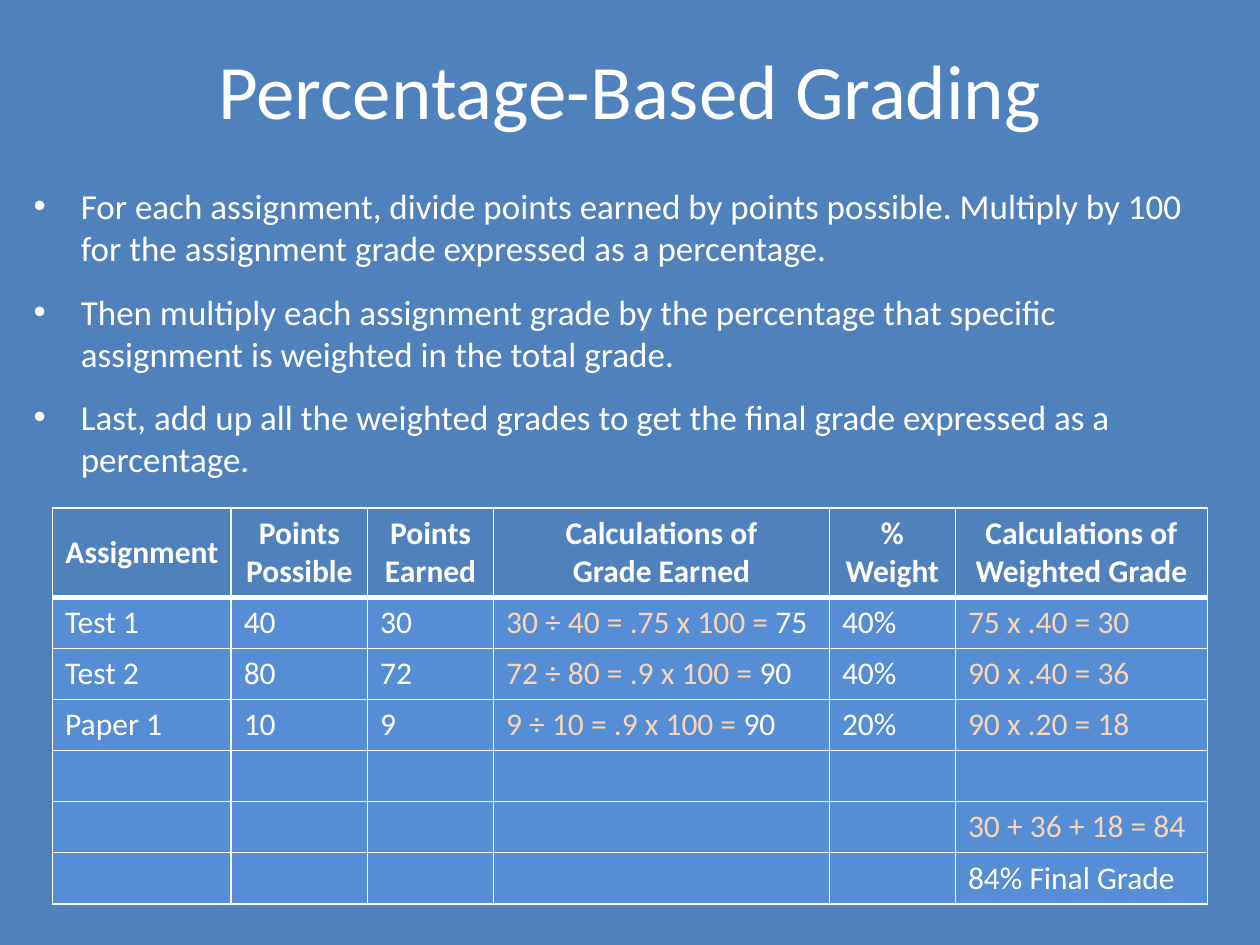
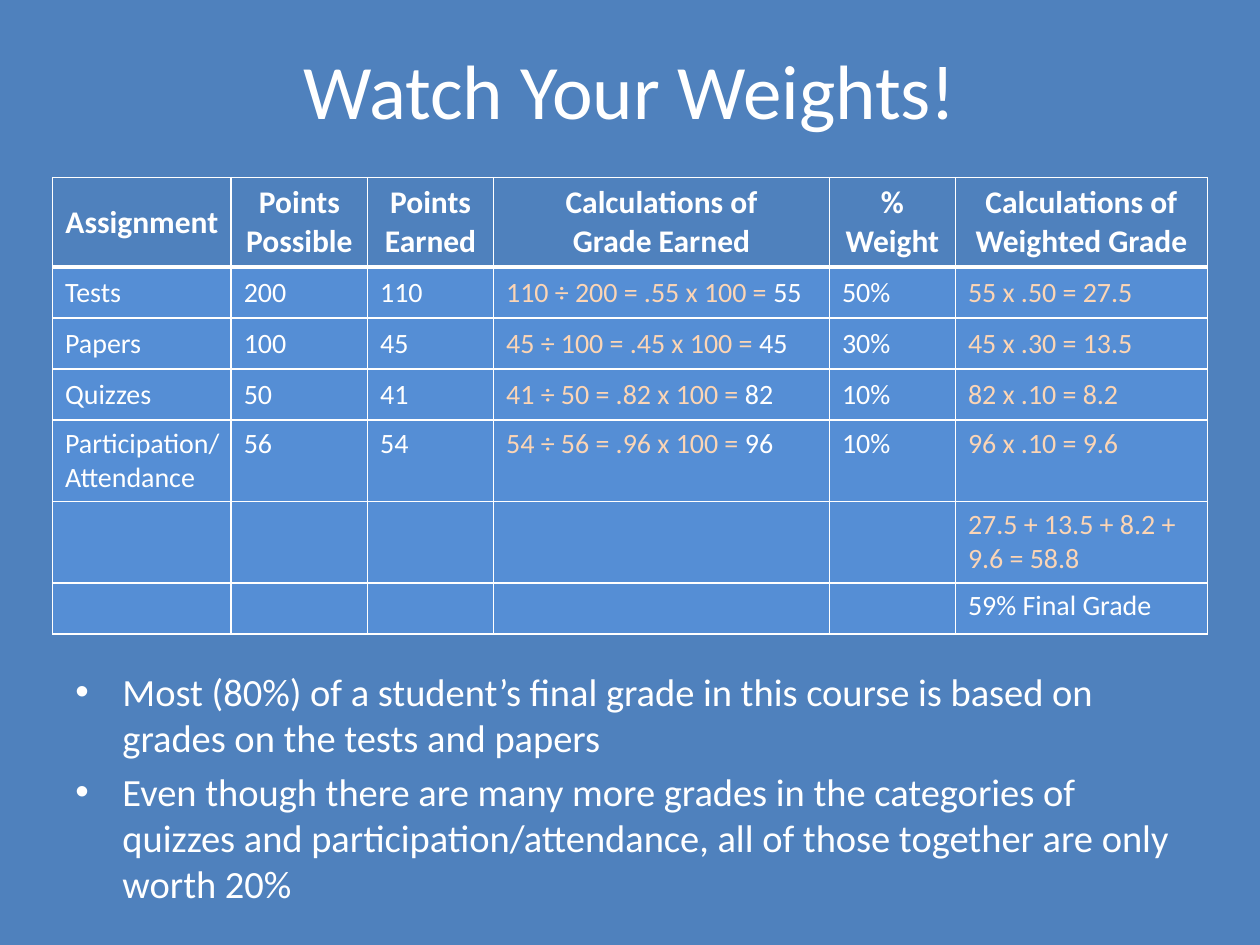
from lxml.etree import SubElement
from pptx import Presentation
from pptx.dml.color import RGBColor
from pptx.enum.text import MSO_ANCHOR as Anchor, PP_ALIGN as Align
from pptx.oxml.ns import qn
from pptx.util import Cm, Pt

BLUE = RGBColor(0x4F, 0x81, 0xBD)
ROW_BLUE = RGBColor(0x55, 0x8E, 0xD5)
PEACH = RGBColor(0xFC, 0xD5, 0xB5)
WHITE = RGBColor(0xFF, 0xFF, 0xFF)

HEADINGS = ["Assignment", "Points Possible", "Points Earned",
            "Calculations of\nGrade Earned", "% Weight",
            "Calculations of Weighted Grade"]
COLUMN_WIDTHS = [3.6, 2.75, 2.54, 6.77, 2.54, 5.08]
GRADE_COLUMN = 3
HEADER_HEIGHT, ROW_HEIGHT, TALL_HEIGHT = 1.8, 1.03, 1.64
BULLET_INDENT = Cm(0.95)


def summary(text):
    """A row that is empty but for its last cell."""
    return [""] * (len(HEADINGS) - 1) + [text]


class GradingDeck:
    font_name = "Calibri"

    def __init__(self):
        self.deck = Presentation()
        self.deck.slide_width, self.deck.slide_height = Cm(25.4), Cm(19.05)
        self.slide = None

    def new_slide(self, title):
        self.slide = self.deck.slides.add_slide(self.deck.slide_layouts[6])
        background = self.slide.background.fill
        background.solid()
        background.fore_color.rgb = BLUE
        frame = self.text_frame(1.27, 0.2, 22.86, 3.18)
        frame.vertical_anchor = Anchor.MIDDLE
        heading = frame.paragraphs[0]
        heading.text = title
        heading.alignment = Align.CENTER
        self.set_font(heading, 44)

    def text_frame(self, left, top, width, height):
        box = self.slide.shapes.add_textbox(Cm(left), Cm(top), Cm(width), Cm(height))
        box.text_frame.word_wrap = True
        return box.text_frame

    def set_font(self, paragraph, size, color=WHITE, bold=False):
        font = paragraph.font
        font.name, font.size, font.bold = self.font_name, Pt(size), bold
        font.color.rgb = color

    def bullets(self, left, top, width, height, points, size, gap):
        frame = self.text_frame(left, top, width, height)
        for index, point in enumerate(points):
            paragraph = frame.add_paragraph() if index else frame.paragraphs[0]
            paragraph.text = point
            paragraph.space_after = Pt(gap)
            properties = paragraph._p.get_or_add_pPr()
            properties.set("marL", str(BULLET_INDENT))
            properties.set("indent", str(-BULLET_INDENT))
            SubElement(properties, qn("a:buFont"), typeface="Arial")
            SubElement(properties, qn("a:buChar"), char="•")
            self.set_font(paragraph, size)

    def grade_table(self, top, rows, size, tall_rows=()):
        """Rows listed in tall_rows hold two lines; row 0 is the header."""
        heights = [HEADER_HEIGHT] + [
            TALL_HEIGHT if number in tall_rows else ROW_HEIGHT
            for number in range(1, len(rows) + 1)]
        table = self.slide.shapes.add_table(
            len(heights), len(HEADINGS), Cm(1.06), Cm(top),
            Cm(sum(COLUMN_WIDTHS)), Cm(sum(heights))).table
        table.first_row = table.horz_banding = False
        for column, width in zip(table.columns, COLUMN_WIDTHS):
            column.width = Cm(width)
        for row, height in zip(table.rows, heights):
            row.height = Cm(height)

        for number, texts in enumerate([HEADINGS] + rows):
            is_header = number == 0
            centred = texts[0] and number not in tall_rows
            for column, text in enumerate(texts):
                cell = table.cell(number, column)
                self.borders(cell, top=3 if number == 1 else 1,
                             bottom=3 if is_header else 1)
                cell.fill.solid()
                cell.fill.fore_color.rgb = BLUE if is_header else ROW_BLUE
                cell.vertical_anchor = Anchor.MIDDLE if centred else Anchor.TOP
                paragraph = cell.text_frame.paragraphs[0]
                self.set_font(paragraph, 18 if is_header else size,
                              PEACH if "=" in text else WHITE, is_header)
                if is_header:
                    paragraph.alignment = Align.CENTER
                    paragraph.text = text
                elif column == GRADE_COLUMN and text:
                    self.worked_grade(paragraph, text)
                else:
                    paragraph.text = text

    def worked_grade(self, paragraph, text):
        """Write the working in the paragraph's colour and its result in white."""
        working, equals, result = text.rpartition("= ")
        paragraph.add_run().text = working + equals
        answer = paragraph.add_run()
        answer.text = result
        answer.font.color.rgb = WHITE

    def borders(self, cell, top, bottom):
        properties = cell._tc.get_or_add_tcPr()
        for side, points in (("L", 1), ("R", 1), ("T", top), ("B", bottom)):
            line = SubElement(properties, qn(f"a:ln{side}"), w=str(Pt(points)))
            fill = SubElement(line, qn("a:solidFill"))
            SubElement(fill, qn("a:srgbClr"), val=str(WHITE))


def main():
    grading = GradingDeck()

    grading.new_slide("Percentage-Based Grading")
    grading.bullets(0.43, 3.6, 24.33, 6.15, [
        "For each assignment, divide points earned by points possible. "
        "Multiply by 100 for the assignment grade expressed as a percentage.",
        "Then multiply each assignment grade by the percentage that specific "
        "assignment is weighted in the total grade.",
        "Last, add up all the weighted grades to get the final grade "
        "expressed as a percentage.",
    ], size=20, gap=12.2)
    grading.grade_table(10.24, [
        ["Test 1", "40", "30", "30 ÷ 40 = .75 x 100 = 75", "40%", "75 x .40 = 30"],
        ["Test 2", "80", "72", "72 ÷ 80 = .9 x 100 = 90", "40%", "90 x .40 = 36"],
        ["Paper 1", "10", "9", "9 ÷ 10 = .9 x 100 = 90", "20%", "90 x .20 = 18"],
        summary(""),
        summary("30 + 36 + 18 = 84"),
        summary("84% Final Grade"),
    ], size=18)

    grading.new_slide("Watch Your Weights!")
    grading.grade_table(3.58, [
        ["Tests", "200", "110", "110 ÷ 200 = .55 x 100 = 55", "50%", "55 x .50 = 27.5"],
        ["Papers", "100", "45", "45 ÷ 100 = .45 x 100 = 45", "30%", "45 x .30 = 13.5"],
        ["Quizzes", "50", "41", "41 ÷ 50 = .82 x 100 = 82", "10%", "82 x .10 = 8.2"],
        ["Participation/Attendance", "56", "54", "54 ÷ 56 = .96 x 100 = 96",
         "10%", "96 x .10 = 9.6"],
        summary("27.5 + 13.5 + 8.2 + 9.6 = 58.8"),
        summary("59% Final Grade"),
    ], size=16, tall_rows=(4, 5))
    grading.bullets(1.27, 13.34, 22.86, 5.5, [
        "Most (80%) of a student’s final grade in this course is based on "
        "grades on the tests and papers",
        "Even though there are many more grades in the categories of quizzes "
        "and participation/attendance, all of those together are only worth 20%",
    ], size=22, gap=4.4)

    grading.deck.save("out.pptx")


if __name__ == "__main__":
    main()
